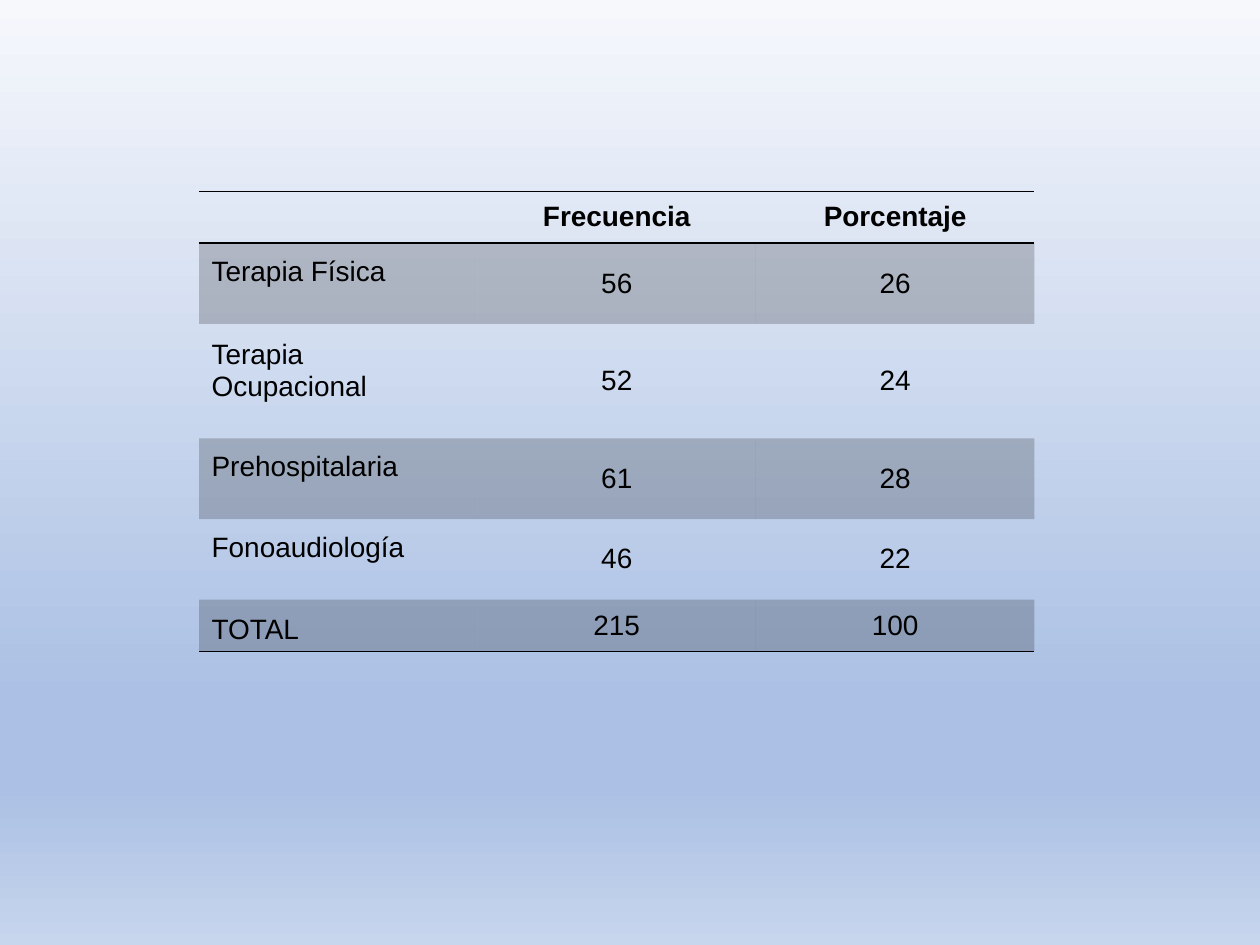
import dataclasses

import pptx
import pptx.dml.color
import pptx.enum.text
import pptx.oxml
import pptx.oxml.ns
import pptx.util
from pptx.util import Inches

ALIGN = pptx.enum.text.PP_ALIGN
ANCHOR = pptx.enum.text.MSO_ANCHOR
qn = pptx.oxml.ns.qn
NS = pptx.oxml.ns.nsdecls("a")


@dataclasses.dataclass(frozen=True)
class Theme:
    font: str = "Arial"
    size: int = 16
    ink: str = "000000"
    shade: int = 20
    rule: int = 1
    sky: tuple = ((0, "F6F8FC"), (74, "ABC0E4"), (83, "ABC0E4"), (100, "C7D5ED"))


THEME = Theme()
ROWS = (
    ("", "Frecuencia", "Porcentaje"),
    ("Terapia Física", "56", "26"),
    ("Terapia Ocupacional", "52", "24"),
    ("Prehospitalaria", "61", "28"),
    ("Fonoaudiología", "46", "22"),
    ("TOTAL", "215", "100"),
)
HEIGHTS = (0.41, 0.64, 0.91, 0.64, 0.64, 0.41)
WIDTH = 2.21


def paint_sky(slide):
    fill = slide.background.fill
    fill.gradient()
    fill.gradient_angle = 270
    stops = slide.element.find(".//" + qn("a:gsLst"))
    for stop in list(stops):
        stops.remove(stop)
    for pos, color in THEME.sky:
        stops.append(pptx.oxml.parse_xml(
            f'<a:gs {NS} pos="{pos * 1000}"><a:srgbClr val="{color}"/></a:gs>'))


def put_text(cell, text, align=ALIGN.CENTER, anchor=ANCHOR.MIDDLE, bold=False):
    cell.vertical_anchor = anchor
    para = cell.text_frame.paragraphs[0]
    para.alignment = align
    para.font.size = pptx.util.Pt(THEME.size)
    if text:
        run = para.add_run()
        run.text = text
        run.font.name = THEME.font
        run.font.size = pptx.util.Pt(THEME.size)
        run.font.bold = bold
        run.font.color.rgb = pptx.dml.color.RGBColor.from_string(THEME.ink)


def shade_cell(cell, dark):
    if not dark:
        cell.fill.background()
        return
    cell.fill.solid()
    cell.fill.fore_color.rgb = pptx.dml.color.RGBColor.from_string(THEME.ink)
    color = cell._tc.tcPr.find(".//" + qn("a:srgbClr"))
    color.append(pptx.oxml.parse_xml(
        f'<a:alpha {NS} val="{THEME.shade * 1000}"/>'))


def rule_cell(cell, sides):
    ink = f'<a:solidFill><a:srgbClr val="{THEME.ink}"/></a:solidFill>'
    width = pptx.util.Pt(THEME.rule)
    for spot, side in enumerate("LRTB"):
        line = ink if side in sides else "<a:noFill/>"
        cell._tc.tcPr.insert(spot, pptx.oxml.parse_xml(
            f'<a:ln{side} {NS} w="{width}">{line}</a:ln{side}>'))


def add_grid(slide):
    cols, last = len(ROWS[0]), len(ROWS) - 1
    frame = slide.shapes.add_table(
        len(ROWS), cols, Inches(1.58), Inches(1.52),
        Inches(WIDTH * cols), Inches(sum(HEIGHTS)))
    table = frame.table
    table.first_row = table.horz_banding = False
    for col in table.columns:
        col.width = Inches(WIDTH)
    rules = {0: "TB", 1: "T", last: "B"}
    for r, (words, high) in enumerate(zip(ROWS, HEIGHTS)):
        table.rows[r].height = Inches(high)
        for c, text in enumerate(words):
            cell = table.cell(r, c)
            if c == 0:
                put_text(cell, text, align=ALIGN.LEFT, anchor=ANCHOR.BOTTOM)
                if 0 < r < last:
                    cell.margin_bottom = Inches(0.29)
            else:
                put_text(cell, text, bold=r == 0)
            shade_cell(cell, r % 2 == 1)
            rule_cell(cell, rules.get(r, ""))


def main():
    deck = pptx.Presentation()
    deck.slide_width, deck.slide_height = Inches(10), Inches(7.5)
    slide = deck.slides.add_slide(deck.slide_layouts[6])
    paint_sky(slide)
    add_grid(slide)
    deck.save("out.pptx")


if __name__ == "__main__":
    main()
